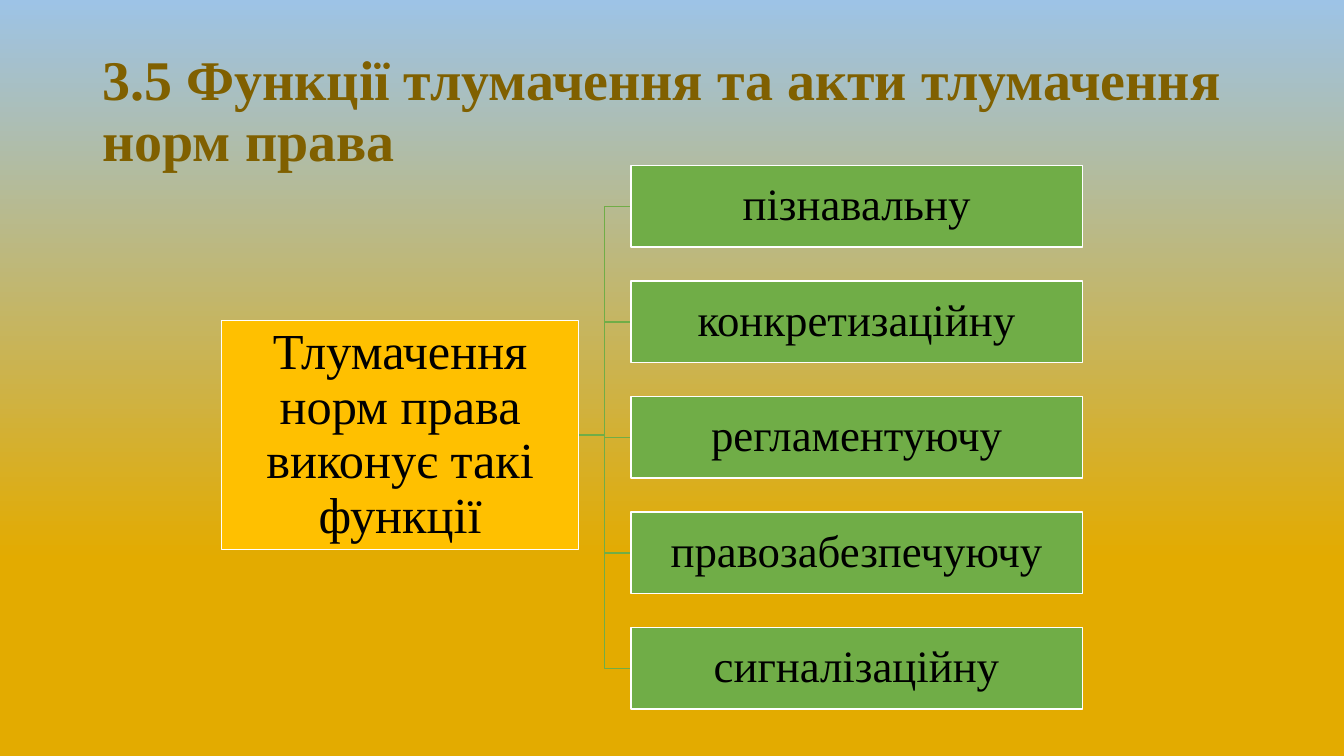
from dataclasses import dataclass

from lxml import etree
from pptx import Presentation
from pptx.dml.color import RGBColor
from pptx.enum.shapes import MSO_SHAPE
from pptx.enum.text import MSO_ANCHOR, MSO_AUTO_SIZE, PP_ALIGN
from pptx.util import Cm, Pt

RECT = MSO_SHAPE.RECTANGLE
MIDDLE = MSO_ANCHOR.MIDDLE
NO_AUTOFIT = MSO_AUTO_SIZE.NONE
LEFT, CENTER = PP_ALIGN.LEFT, PP_ALIGN.CENTER


@dataclass(frozen=True)
class Theme:
    font: str = "Times New Roman"
    gold: str = "E3AB00"
    sky: str = "9DC3E6"
    title: str = "806000"
    root: str = "FFC000"
    leaf: str = "70AD47"
    border: str = "FFFFFF"
    text: str = "000000"
    title_size: int = 40
    root_size: int = 36
    leaf_size: int = 32
    line_width: int = 1
    line_spacing: float = 0.9


THEME = Theme()

TITLE = "3.5 Функції тлумачення та акти тлумачення норм права"
ROOT = "Тлумачення норм права виконує такі функції"
FUNCTIONS = ["пізнавальну", "конкретизаційну", "регламентуючу",
             "правозабезпечуючу", "сигналізаційну"]

# Diagram geometry, in centimetres
ROOT_BOX = (5.59, 8.08, 8.99, 5.77)
LEAF_LEFT, LEAF_TOP, LEAF_WIDTH, LEAF_HEIGHT = 15.9, 4.17, 11.38, 2.06
LEAF_PITCH = 2.91


def rgb(value):
    return RGBColor.from_string(value)


def set_background(s):
    fill = s.background.fill
    fill.gradient()
    fill.gradient_angle = 90
    stops = ((0.26, THEME.gold), (1, THEME.sky))
    for stop, (position, color) in zip(fill.gradient_stops, stops):
        stop.position = position
        stop.color.rgb = rgb(color)


def set_text(tf, text, size, color, align, bold=False):
    tf.word_wrap = True
    tf.auto_size = NO_AUTOFIT
    tf.vertical_anchor = MIDDLE
    tf.text = text
    p = tf.paragraphs[0]
    p.alignment = align
    p.line_spacing = THEME.line_spacing
    p.font.name = THEME.font
    p.font.size = Pt(size)
    p.font.bold = bold
    p.font.color.rgb = rgb(color)


def set_line(shape, color):
    shape.shadow.inherit = False
    shape.line.color.rgb = rgb(color)
    shape.line.width = Pt(THEME.line_width)


def add_title(s):
    title = s.shapes.title
    title.left, title.top = Cm(2.33), Cm(1.01)
    title.width, title.height = Cm(29.21), Cm(3.68)
    set_text(title.text_frame, TITLE, THEME.title_size, THEME.title, LEFT, True)


def add_box(s, box, text, size, fill, inset):
    shape = s.shapes.add_shape(RECT, *map(Cm, box))
    shape.fill.solid()
    shape.fill.fore_color.rgb = rgb(fill)
    set_line(shape, THEME.border)
    tf = shape.text_frame
    tf.margin_left = tf.margin_right = Cm(inset)
    tf.margin_top = tf.margin_bottom = Cm(inset)
    set_text(tf, text, size, THEME.text, CENTER)


def add_branch(s, x1, y1, x2, y2):
    middle = (x1 + x2) / 2
    builder = s.shapes.build_freeform(Cm(x1), Cm(y1))
    corners = [(middle, y1), (middle, y2), (x2, y2)]
    builder.add_line_segments([(Cm(x), Cm(y)) for x, y in corners], close=False)
    branch = builder.convert_to_shape()
    branch.fill.background()
    set_line(branch, THEME.leaf)


def add_tree(s):
    left, top, width, height = ROOT_BOX
    leaf_tops = [LEAF_TOP + i * LEAF_PITCH for i in range(len(FUNCTIONS))]

    # Branches lie behind the boxes
    for leaf_top in leaf_tops:
        add_branch(s, left + width, top + height / 2,
                   LEAF_LEFT, leaf_top + LEAF_HEIGHT / 2)

    add_box(s, ROOT_BOX, ROOT, THEME.root_size, THEME.root, 0.06)
    for leaf_top, text in zip(leaf_tops, FUNCTIONS):
        box = (LEAF_LEFT, leaf_top, LEAF_WIDTH, LEAF_HEIGHT)
        add_box(s, box, text, THEME.leaf_size, THEME.leaf, 0.06)


def main():
    prs = Presentation()
    prs.slide_width, prs.slide_height = Cm(33.87), Cm(19.05)
    s = prs.slides.add_slide(prs.slide_layouts[5])
    set_background(s)
    add_title(s)
    add_tree(s)
    prs.save("out.pptx")


if __name__ == "__main__":
    main()
